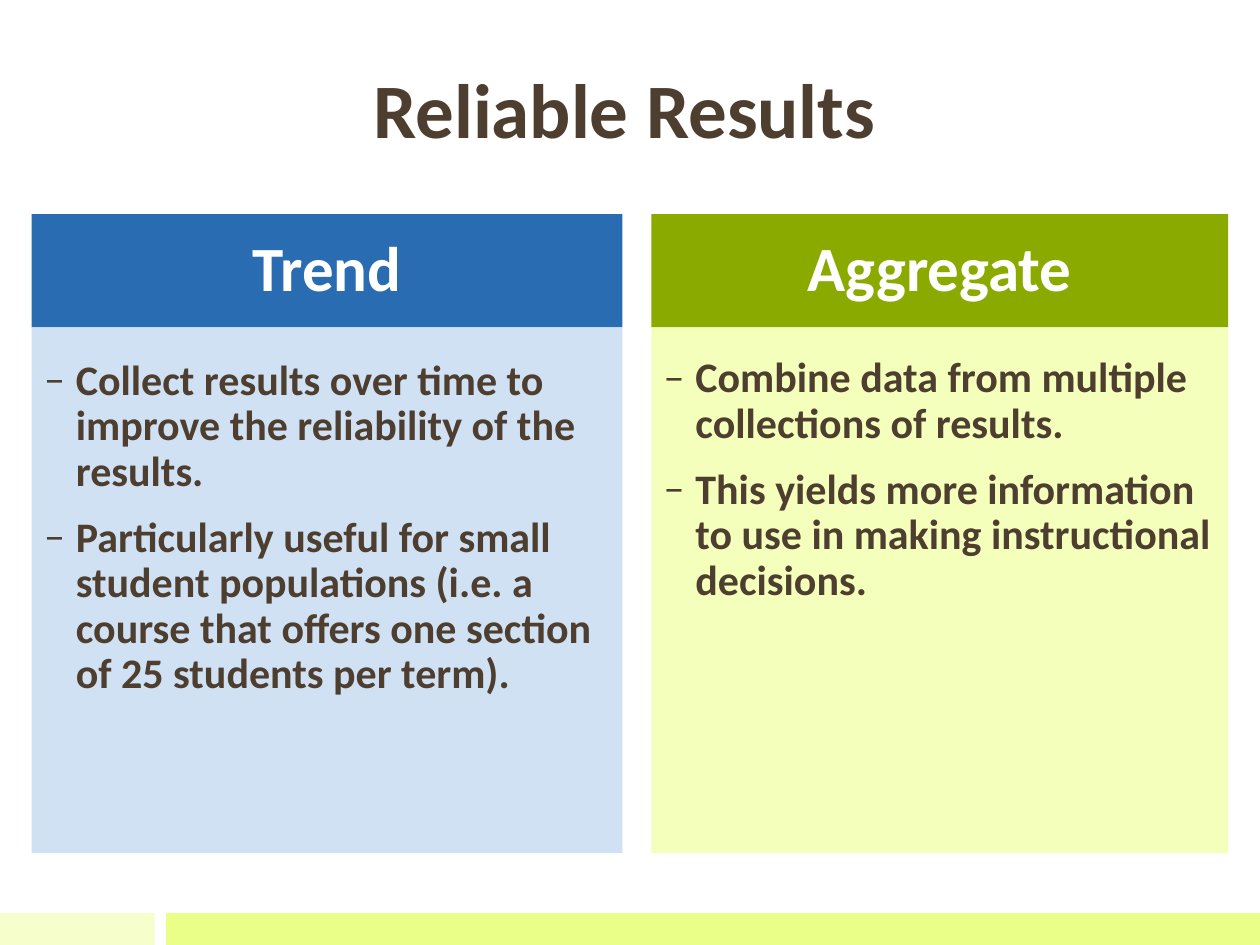
from dataclasses import dataclass

from lxml.etree import SubElement
from pptx import Presentation
from pptx.dml.color import RGBColor
from pptx.enum.shapes import MSO_SHAPE as Shape
from pptx.enum.text import MSO_ANCHOR as Anchor, PP_ALIGN as Align
from pptx.oxml.ns import qn
from pptx.util import Cm, Pt

FONT = "Calibri"
COLORS = {
    "text": "4D3E2F",
    "white": "FFFFFF",
    "blue": "2A6CB2",
    "pale_blue": "D0E1F4",
    "green": "8BAA00",
    "pale_green": "F3FFBB",
    "footer_pale": "F6FFCC",
    "footer_lime": "E9FF88",
}
PANEL_TOP, HEADER_HEIGHT, BODY_HEIGHT = 4.32, 2.28, 10.6
FOOTER_TOP, FOOTER_HEIGHT = 18.41, 0.64
BULLET_INDENT = Cm(0.64)


@dataclass
class Panel:
    heading: str
    points: list[str]
    left: float
    width: float
    header_color: str
    body_color: str
    top_inset: float


PANELS = [
    Panel(
        "Trend",
        [
            "Collect results over time to improve the reliability of the results.",
            "Particularly useful for small student populations "
            "(i.e. a course that offers one section of 25 students per term).",
        ],
        0.64, 11.91, "blue", "pale_blue", 0.64,
    ),
    Panel(
        "Aggregate",
        [
            "Combine data from multiple collections of results.",
            "This yields more information to use in making instructional decisions.",
        ],
        13.13, 11.63, "green", "pale_green", 0.59,
    ),
]


def add_block(page, left: float, top: float, width: float, height: float, color: str):
    """Add a borderless filled rectangle, measured in centimetres."""
    block = page.shapes.add_shape(
        Shape.RECTANGLE, Cm(left), Cm(top), Cm(width), Cm(height))
    block.shadow.inherit = False
    block.fill.solid()
    block.fill.fore_color.rgb = RGBColor.from_string(COLORS[color])
    block.line.fill.background()
    return block


def write(para, text: str, size: int, color: str, align=Align.CENTER) -> None:
    para.alignment = align
    span = para.add_run()
    span.text = text
    span.font.name = FONT
    span.font.size = Pt(size)
    span.font.bold = True
    span.font.color.rgb = RGBColor.from_string(COLORS[color])


def add_dash(para) -> None:
    """Give the paragraph a hanging dash bullet."""
    properties = para._p.get_or_add_pPr()
    properties.set("marL", str(BULLET_INDENT))
    properties.set("indent", str(-BULLET_INDENT))
    SubElement(properties, qn("a:buFont")).set("typeface", FONT)
    SubElement(properties, qn("a:buChar")).set("char", "–")


def add_panel(page, panel: Panel) -> None:
    # Heading band
    header = add_block(page, panel.left, PANEL_TOP, panel.width,
                       HEADER_HEIGHT, panel.header_color)
    header.text_frame.vertical_anchor = Anchor.MIDDLE
    para = header.text_frame.paragraphs[0]
    para.line_spacing = 0.9
    write(para, panel.heading, 36, "white")

    # Bulleted body
    body = add_block(page, panel.left, PANEL_TOP + HEADER_HEIGHT, panel.width,
                     BODY_HEIGHT, panel.body_color)
    frame = body.text_frame
    frame.word_wrap = True
    frame.vertical_anchor = Anchor.TOP
    frame.margin_top = Cm(panel.top_inset)
    for index, point in enumerate(panel.points):
        para = frame.add_paragraph() if index else frame.paragraphs[0]
        para.line_spacing = 0.9
        para.space_after = Pt(12)
        write(para, point, 24, "text", Align.LEFT)
        add_dash(para)


def main() -> None:
    deck = Presentation()
    deck.slide_width, deck.slide_height = Cm(25.4), Cm(19.05)
    page = deck.slides.add_slide(deck.slide_layouts[6])

    # Footer bars
    add_block(page, 0, FOOTER_TOP, 3.12, FOOTER_HEIGHT, "footer_pale")
    add_block(page, 3.35, FOOTER_TOP, 22.05, FOOTER_HEIGHT, "footer_lime")

    # Title
    box = page.shapes.add_textbox(Cm(0.43), Cm(0.76), Cm(24.33), Cm(2.82))
    box.text_frame.word_wrap = True
    box.text_frame.vertical_anchor = Anchor.MIDDLE
    write(box.text_frame.paragraphs[0], "Reliable Results", 44, "text")

    # Comparison panels
    for panel in PANELS:
        add_panel(page, panel)

    deck.save("out.pptx")


if __name__ == "__main__":
    main()
